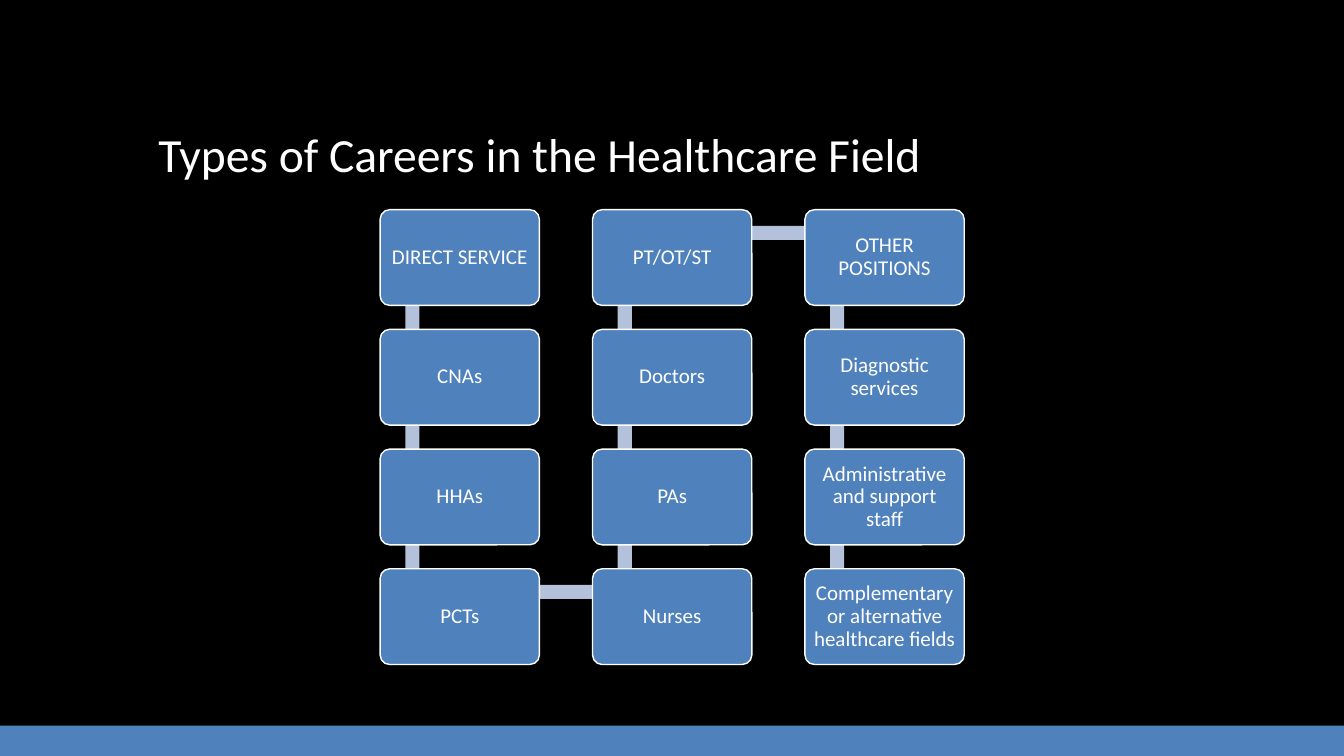
from dataclasses import dataclass
from itertools import pairwise

from pptx import Presentation
from pptx.dml.color import RGBColor
from pptx.enum.shapes import MSO_SHAPE as Shape
from pptx.enum.text import MSO_ANCHOR as Anchor, PP_ALIGN as Align
from pptx.util import Inches, Pt


@dataclass(frozen=True)
class Theme:
    background: RGBColor = RGBColor(0x00, 0x00, 0x00)
    accent: RGBColor = RGBColor(0x4F, 0x81, 0xBD)
    link: RGBColor = RGBColor(0xB3, 0xC1, 0xDB)
    text: RGBColor = RGBColor(0xFF, 0xFF, 0xFF)
    font: str = "Calibri"
    title_size: Pt = Pt(34)
    card_size: Pt = Pt(15)


THEME = Theme()
SLIDE_WIDTH, SLIDE_HEIGHT = 13.33, 7.5
FOOTER_HEIGHT = 0.3
GRID_LEFT, GRID_TOP = 3.77, 2.08
CARD_WIDTH, CARD_HEIGHT = 1.58, 0.95
COLUMN_PITCH, ROW_PITCH = CARD_WIDTH * 4 / 3, CARD_HEIGHT * 5 / 4
LINK_X, LINK_Y, LINK_WIDTH = 0.32, 0.23, 0.14
CARD_INSET = 0.06

CAREER_COLUMNS = [
    ["DIRECT SERVICE", "CNAs", "HHAs", "PCTs"],
    ["PT/OT/ST", "Doctors", "PAs", "Nurses"],
    [
        "OTHER POSITIONS",
        "Diagnostic services",
        "Administrative and support staff",
        "Complementary or alternative healthcare fields",
    ],
]


def apply_format(target, values):
    for name, value in values.items():
        setattr(target, name, value)


def write_text(box, text, size, align, frame_format):
    frame = box.text_frame
    apply_format(frame, {"word_wrap": True, **frame_format})
    para = frame.paragraphs[0]
    apply_format(para, {"alignment": align, "line_spacing": 0.9})
    span = para.add_run()
    span.text = text
    apply_format(span.font, {"name": THEME.font, "size": size})
    span.font.color.rgb = THEME.text


def add_block(shapes, kind, left, top, width, height, color):
    block = shapes.add_shape(
        kind, Inches(left), Inches(top), Inches(width), Inches(height)
    )
    block.shadow.inherit = False
    block.fill.solid()
    block.fill.fore_color.rgb = color
    block.line.fill.background()
    return block


def add_title(page, text):
    title = page.shapes.title
    place = {
        "left": Inches(1.47),
        "top": Inches(0.51),
        "width": Inches(10.4),
        "height": Inches(1.35),
    }
    apply_format(title, place)
    write_text(
        title, text, THEME.title_size, Align.LEFT, {"vertical_anchor": Anchor.BOTTOM}
    )


def add_link(shapes, start, end):
    left, right = sorted([start[0], end[0]])
    top, bottom = sorted([start[1], end[1]])
    if left == right:
        left -= LINK_WIDTH / 2
    else:
        top -= LINK_WIDTH / 2
    width = max(right - left, LINK_WIDTH)
    height = max(bottom - top, LINK_WIDTH)
    add_block(shapes, Shape.RECTANGLE, left, top, width, height, THEME.link)


def add_card(shapes, left, top, text):
    card = add_block(
        shapes, Shape.ROUNDED_RECTANGLE, left, top, CARD_WIDTH, CARD_HEIGHT, THEME.accent
    )
    card.adjustments[0] = 0.1
    card.line.color.rgb = THEME.text
    card.line.width = Pt(1)
    sides = ("left", "top", "right", "bottom")
    margins = {f"margin_{side}": Inches(CARD_INSET) for side in sides}
    write_text(
        card,
        text,
        THEME.card_size,
        Align.CENTER,
        {"vertical_anchor": Anchor.MIDDLE, **margins},
    )


def snake_cards():
    cards = []
    for column, names in enumerate(CAREER_COLUMNS):
        left = GRID_LEFT + column * COLUMN_PITCH
        stack = [
            (left, GRID_TOP + row * ROW_PITCH, name) for row, name in enumerate(names)
        ]
        cards += reversed(stack) if column % 2 else stack
    return cards


def add_career_snake(page):
    shapes = page.shapes.add_group_shape().shapes
    cards = snake_cards()
    anchors = [(left + LINK_X, top + LINK_Y) for left, top, name in cards]
    for start, end in pairwise(anchors):
        add_link(shapes, start, end)
    for left, top, name in cards:
        add_card(shapes, left, top, name)


def main():
    deck = Presentation()
    deck.slide_width = Inches(SLIDE_WIDTH)
    deck.slide_height = Inches(SLIDE_HEIGHT)
    page = deck.slides.add_slide(deck.slide_layouts.get_by_name("Title Only"))
    page.background.fill.solid()
    page.background.fill.fore_color.rgb = THEME.background
    add_block(
        page.shapes,
        Shape.RECTANGLE,
        0,
        SLIDE_HEIGHT - FOOTER_HEIGHT,
        SLIDE_WIDTH,
        FOOTER_HEIGHT,
        THEME.accent,
    )
    add_title(page, "Types of Careers in the Healthcare Field")
    add_career_snake(page)
    deck.save("out.pptx")


if __name__ == "__main__":
    main()
